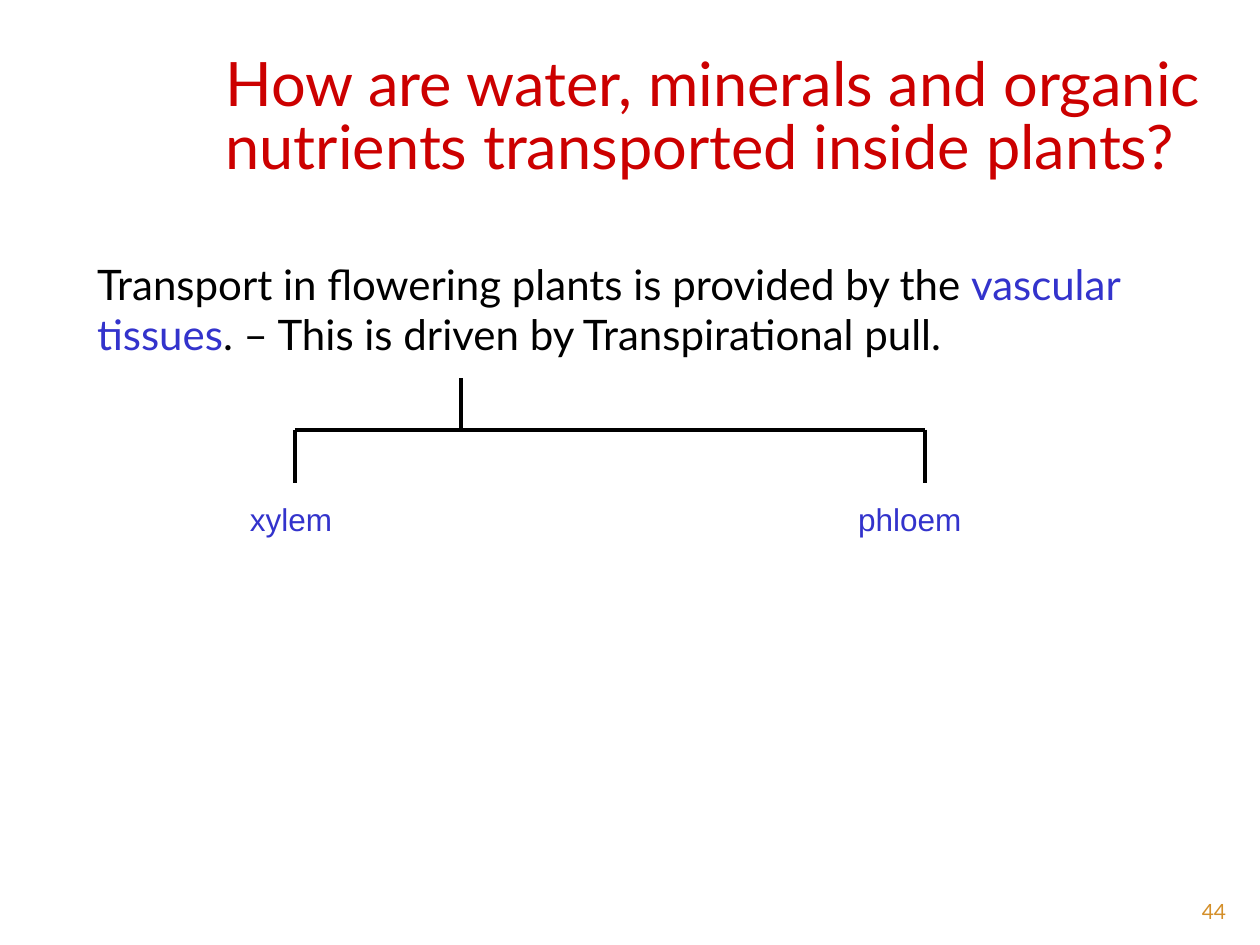
from lxml import etree
from pptx import Presentation
from pptx.dml.color import RGBColor
from pptx.enum.shapes import MSO_CONNECTOR
from pptx.enum.text import MSO_ANCHOR, MSO_AUTO_SIZE, PP_ALIGN
from pptx.oxml.ns import qn
from pptx.util import Inches, Pt

LEFT, CENTER, RIGHT = PP_ALIGN.LEFT, PP_ALIGN.CENTER, PP_ALIGN.RIGHT
TOP = MSO_ANCHOR.TOP
NO_FIT = MSO_AUTO_SIZE.NONE
STRAIGHT = MSO_CONNECTOR.STRAIGHT

RED = RGBColor(0xCC, 0x00, 0x00)
BLUE = RGBColor(0x33, 0x33, 0xCC)
BLACK = RGBColor(0x00, 0x00, 0x00)
GOLD = RGBColor(0xD4, 0x8F, 0x29)

TITLE = [("How are water, minerals and organic nutrients "
          "transported inside plants?", RED)]
BODY = [
    ("Transport in flowering plants is provided by the ", BLACK),
    ("vascular tissues", BLUE),
    (". – This is driven by Transpirational pull.", BLACK),
]
# text, left, width, centre of its branch
TISSUES = [("xylem", 1.58, 1.46, 2.34), ("phloem", 6.33, 1.78, 7.34)]
PAGE = "44"

STEM_X, STEM_TOP, BAR_Y, DROP = 3.66, 3.0, 3.41, 0.42
LABEL_TOP, LABEL_HIGH = 3.92, 0.63


def place(shape, left, top, width, height):
    shape.left, shape.top = Inches(left), Inches(top)
    shape.width, shape.height = Inches(width), Inches(height)


def write(shape, parts, size, font="Lato", align=LEFT, wrap=True):
    """Fill the shape with one paragraph of (text, colour) runs."""
    frame = shape.text_frame
    frame.auto_size = NO_FIT
    frame.word_wrap = wrap
    frame.vertical_anchor = TOP
    para = frame.paragraphs[0]
    para.alignment = align
    para.space_before = Pt(0)
    for text, color in parts:
        run = para.add_run()
        run.text = text
        run.font.size = Pt(size)
        run.font.name = font
        run.font.color.rgb = color
    return para


def label(slide, box, *args, **style):
    shape = slide.shapes.add_textbox(*map(Inches, box))
    write(shape, *args, **style)


def draw_line(slide, *ends):
    line = slide.shapes.add_connector(STRAIGHT, *map(Inches, ends))
    line.line.color.rgb = BLACK
    line.line.width = Pt(2.25)
    etree.SubElement(line._element.spPr, qn("a:effectLst"))


def main():
    prs = Presentation()
    prs.slide_width, prs.slide_height = Inches(10), Inches(7.5)
    slide = prs.slides.add_slide(prs.slide_layouts[1])

    title = slide.shapes.title
    place(title, 0.54, 0.4, 9.58, 1.09)
    para = write(title, TITLE, 35)
    para.line_spacing = 0.85
    title.text_frame.margin_left = Inches(1.25)

    body = slide.placeholders[1]
    place(body, 0.67, 2, 8.42, 0.91)
    props = write(body, BODY, 24)._p.get_or_add_pPr()
    props.set("marL", "0")
    props.set("indent", "0")
    etree.SubElement(props, qn("a:buNone"))

    draw_line(slide, STEM_X, STEM_TOP, STEM_X, BAR_Y)
    draw_line(slide, TISSUES[0][3], BAR_Y, TISSUES[-1][3], BAR_Y)
    for text, left, width, mid in TISSUES:
        draw_line(slide, mid, BAR_Y, mid, BAR_Y + DROP)
        label(slide, (left, LABEL_TOP, width, LABEL_HIGH), [(text, BLUE)],
              18, font="Arial", align=CENTER, wrap=False)

    label(slide, (9, 7.08, 0.83, 0.27), [(PAGE, GOLD)], 12, align=RIGHT)
    prs.save("out.pptx")


if __name__ == "__main__":
    main()
